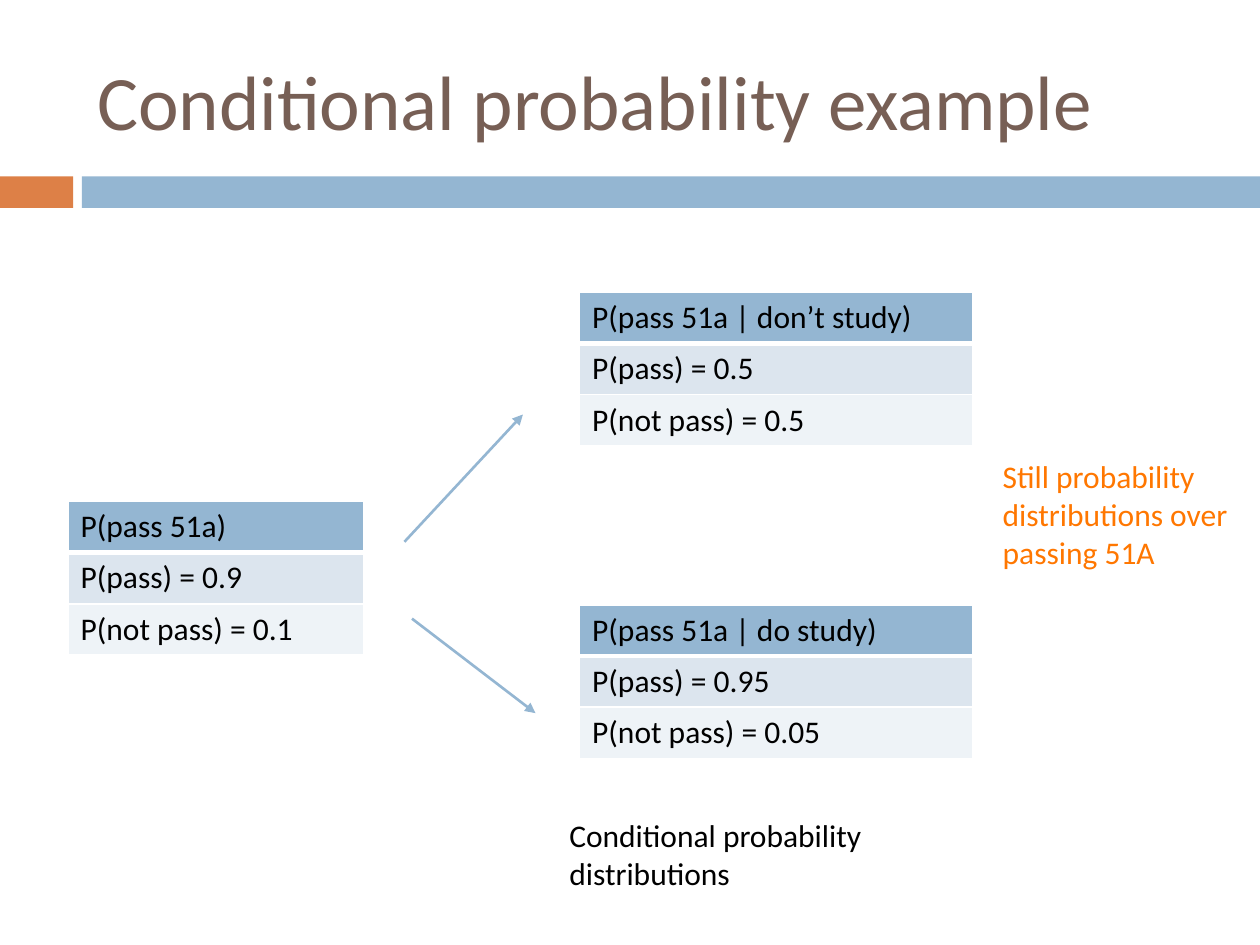
"""Build the conditional probability example slide."""
from lxml.etree import SubElement
from pptx import Presentation
from pptx.dml.color import RGBColor
from pptx.enum.shapes import MSO_CONNECTOR, MSO_SHAPE
from pptx.enum.text import MSO_ANCHOR, PP_ALIGN
from pptx.oxml import parse_xml
from pptx.oxml.ns import nsdecls, qn
from pptx.util import Inches, Pt

BLUE, ORANGE, WHITE, BLACK = "94B6D2", "DD8047", "FFFFFF", "000000"
ROW_FILLS = [BLUE, "DCE5EE", "EEF3F7"]
ROW_HEIGHT = 1.22 / 3


def rgb(value):
    return RGBColor.from_string(value)


def write(frame, text, color=BLACK, size=18):
    frame.text = text
    font = frame.paragraphs[0].runs[0].font
    font.name, font.size, font.bold = "Calibri", Pt(size), False
    font.color.rgb = rgb(color)


prs = Presentation()
prs.slide_width, prs.slide_height = Inches(10), Inches(7.5)
slide = prs.slides.add_slide(prs.slide_layouts[5])
shapes = slide.shapes

title = shapes.title
title.left, title.top = Inches(0.67), Inches(0.25)
title.width, title.height = Inches(8.92), Inches(1.08)
write(title.text_frame, "Conditional probability example", "775F55", 44)
title.text_frame.vertical_anchor = MSO_ANCHOR.MIDDLE
title.text_frame.paragraphs[0].alignment = PP_ALIGN.LEFT

for left, width, color in [(0, 0.58, ORANGE), (0.65, 9.35, BLUE)]:
    band = shapes.add_shape(
        MSO_SHAPE.RECTANGLE, Inches(left), Inches(1.4), Inches(width), Inches(0.25)
    )
    band.shadow.inherit = False
    band.fill.solid()
    band.fill.fore_color.rgb = rgb(color)
    band.line.fill.background()

distributions = [
    (0.54, 3.98, 2.35, "P(pass 51a)", "0.9", "0.1"),
    (4.6, 2.32, 3.12, "P(pass 51a | don’t study)", "0.5", "0.5"),
    (4.6, 4.8, 3.12, "P(pass 51a | do study)", "0.95", "0.05"),
]
for left, top, width, heading, passing, failing in distributions:
    table = shapes.add_table(
        3, 1, Inches(left), Inches(top), Inches(width), Inches(3 * ROW_HEIGHT)
    ).table
    lines = [heading, f"P(pass) = {passing}", f"P(not pass) = {failing}"]
    for row, (line, fill) in enumerate(zip(lines, ROW_FILLS)):
        table.rows[row].height = Inches(ROW_HEIGHT)
        cell = table.cell(row, 0)
        write(cell.text_frame, line)
        cell.fill.solid()
        cell.fill.fore_color.rgb = rgb(fill)
        properties = cell._tc.get_or_add_tcPr()
        for index, side in enumerate("LRTB"):
            heavy = (row, side) in [(0, "B"), (1, "T")]
            properties.insert(index, parse_xml(
                f'<a:ln{side} {nsdecls("a")} w="{Pt(3 if heavy else 1)}">'
                f'<a:solidFill><a:srgbClr val="{WHITE}"/></a:solidFill></a:ln{side}>'
            ))

for start_x, start_y, end_x, end_y in [(3.21, 4.3, 4.15, 3.29), (3.27, 4.91, 4.25, 5.66)]:
    arrow = shapes.add_connector(
        MSO_CONNECTOR.STRAIGHT,
        Inches(start_x), Inches(start_y), Inches(end_x), Inches(end_y),
    )
    arrow.line.color.rgb = rgb(BLUE)
    arrow.line.width = Pt(1.5)
    SubElement(arrow.line._get_or_add_ln(), qn("a:tailEnd"), type="triangle")
    SubElement(arrow._element.spPr, qn("a:effectLst"))

captions = [
    (4.42, 6.43, 3.79, 0.4, "Conditional probability distributions", BLACK),
    (7.86, 3.58, 2.14, 1.01, "Still probability distributions over passing 51A", "FF7700"),
]
for left, top, width, height, text, color in captions:
    caption = shapes.add_textbox(Inches(left), Inches(top), Inches(width), Inches(height))
    caption.text_frame.word_wrap = True
    write(caption.text_frame, text, color)

prs.save("out.pptx")
